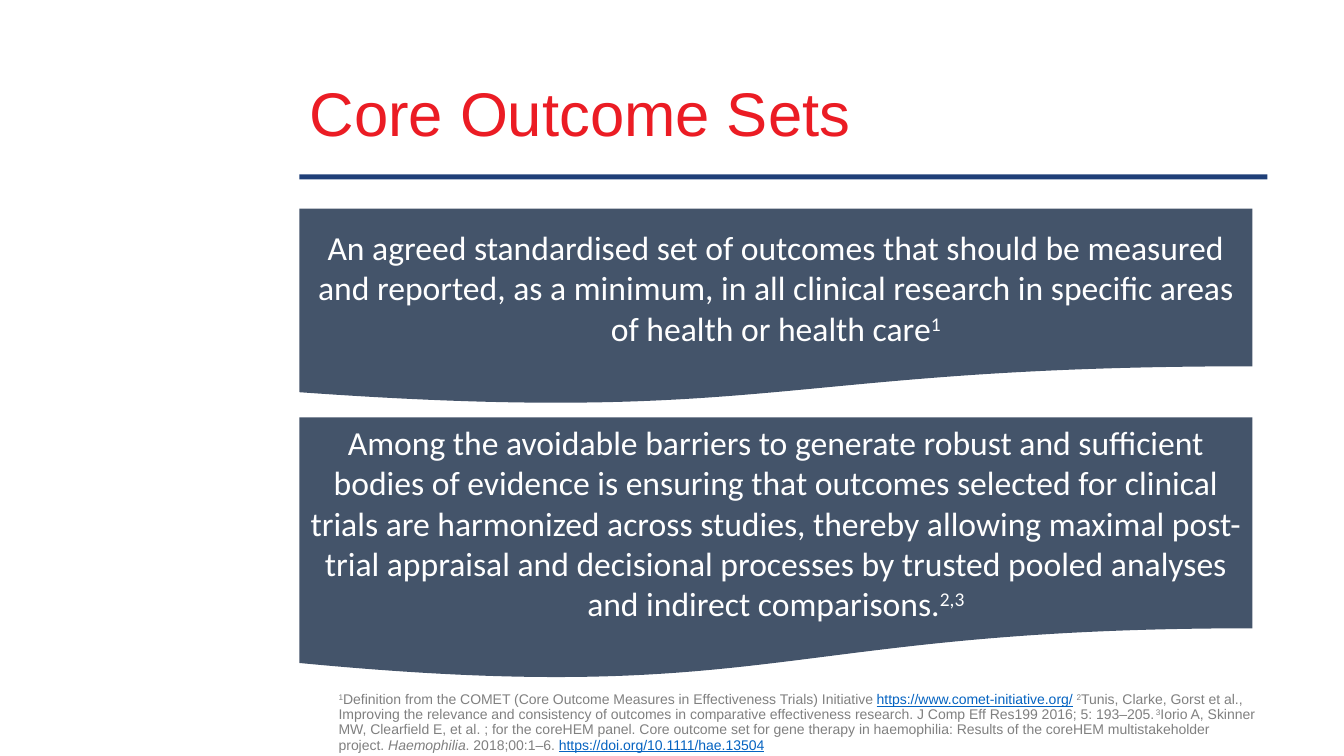
from dataclasses import dataclass

from pptx import Presentation
from pptx.dml.color import RGBColor
from pptx.enum.shapes import MSO_SHAPE as Shape
from pptx.enum.text import MSO_ANCHOR as Anchor, PP_ALIGN as Align
from pptx.util import Inches, Pt


@dataclass(frozen=True)
class Theme:
    red: str = "EB1C24"
    blue: str = "1F3F78"
    slate: str = "44546A"
    white: str = "FFFFFF"
    grey: str = "808080"
    link: str = "0563C1"
    head: int = 44
    body: int = 24
    note: int = 10
    sans: str = "Arial"
    text: str = "Calibri"


theme = Theme()

title = [("Core Outcome Sets", "")]

panels = [
    (2.07, 1.95, [
        ("An agreed standardised set of outcomes that should be measured and reported, "
         "as a minimum, in all clinical research in specific areas of health or health care", ""),
        ("1", "super"),
    ]),
    (4.14, 2.61, [
        ("Among the avoidable barriers to generate robust and sufficient bodies of evidence "
         "is ensuring that outcomes selected for clinical trials are harmonized across studies, "
         "thereby allowing maximal post-trial appraisal and decisional processes by trusted "
         "pooled analyses and indirect comparisons.", ""),
        ("2,3", "super"),
    ]),
]

sources = [
    ("1", "super"),
    ("Definition from the COMET (Core Outcome Measures in Effectiveness Trials) Initiative ", ""),
    ("https://www.comet-initiative.org/", "link"),
    (" ", ""),
    ("2", "super"),
    ("Tunis, Clarke, Gorst et al., Improving the relevance and consistency of outcomes in "
     "comparative effectiveness research. J Comp Eff Res199 2016; 5: 193–205.", ""),
    (" 3", "super"),
    ("Iorio A, Skinner MW, Clearfield E, et al. ; for the coreHEM panel. Core outcome set "
     "for gene therapy in haemophilia: Results of the coreHEM multistakeholder project. ", ""),
    ("Haemophilia", "italic"),
    (". 2018;00:1–6. ", ""),
    ("https://doi.org/10.1111/hae.13504", "link"),
]

left = 2.97
width = 9.6
inner = 9.45


def box(x, y, w, h):
    return [Inches(n) for n in (x, y, w, h)]


def write(shape, runs, *, size, color, font, align=Align.LEFT, anchor=Anchor.MIDDLE, gap=1.0):
    frame = shape.text_frame
    frame.word_wrap = True
    frame.vertical_anchor = anchor
    para = frame.paragraphs[0]
    para.alignment = align
    para.line_spacing = gap
    para.space_before = Pt(0)
    for text, style in runs:
        run = para.add_run()
        run.text = text
        face = run.font
        face.name = font
        face.size = Pt(size)
        face.color.rgb = RGBColor.from_string(theme.link if style == "link" else color)
        if style == "link":
            face.underline = True
        elif style == "italic":
            face.italic = True
        elif style == "super":
            run._r.get_or_add_rPr().set("baseline", "30000")


def block(slide, kind, place, fill):
    shape = slide.shapes.add_shape(kind, *place)
    shape.shadow.inherit = False
    shape.fill.solid()
    shape.fill.fore_color.rgb = RGBColor.from_string(fill)
    shape.line.fill.background()
    return shape


def main():
    deck = Presentation()
    deck.slide_width, deck.slide_height = Inches(13.33), Inches(7.5)
    slide = deck.slides.add_slide(deck.slide_layouts[5])

    head = slide.shapes.title
    head.left, head.top, head.width, head.height = box(left, 0.59, width, 1.14)
    write(head, title, size=theme.head, color=theme.red, font=theme.sans, gap=0.9)
    block(slide, Shape.RECTANGLE, box(left, 1.73, width, 0.05), theme.blue)

    for top, height, runs in panels:
        panel = block(slide, Shape.FLOWCHART_DOCUMENT, box(left, top, inner, height), theme.slate)
        write(panel, runs, size=theme.body, color=theme.white, font=theme.text, align=Align.CENTER)

    notes = slide.shapes.add_textbox(*box(3.26, 6.82, 9.31, 0.68))
    write(notes, sources, size=theme.note, color=theme.grey, font=theme.sans,
          anchor=Anchor.TOP, gap=0.9)

    deck.save("out.pptx")


if __name__ == "__main__":
    main()
